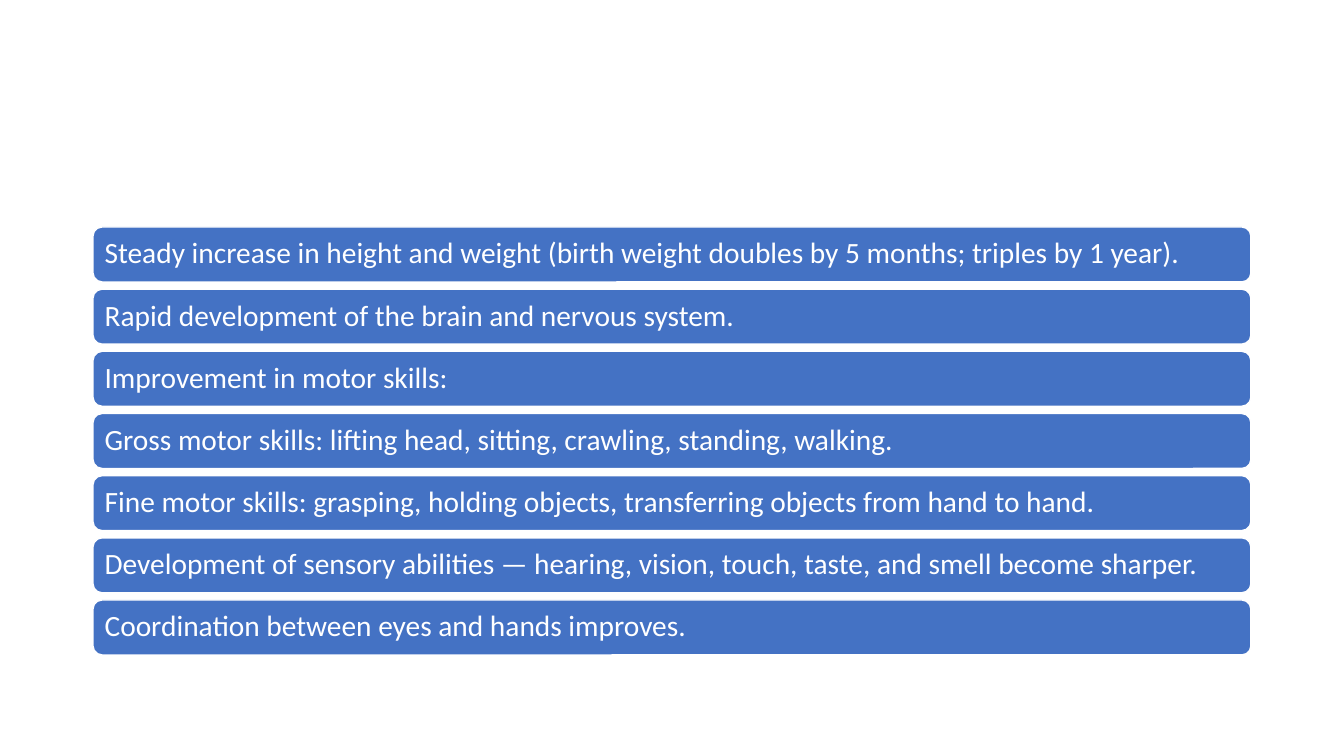
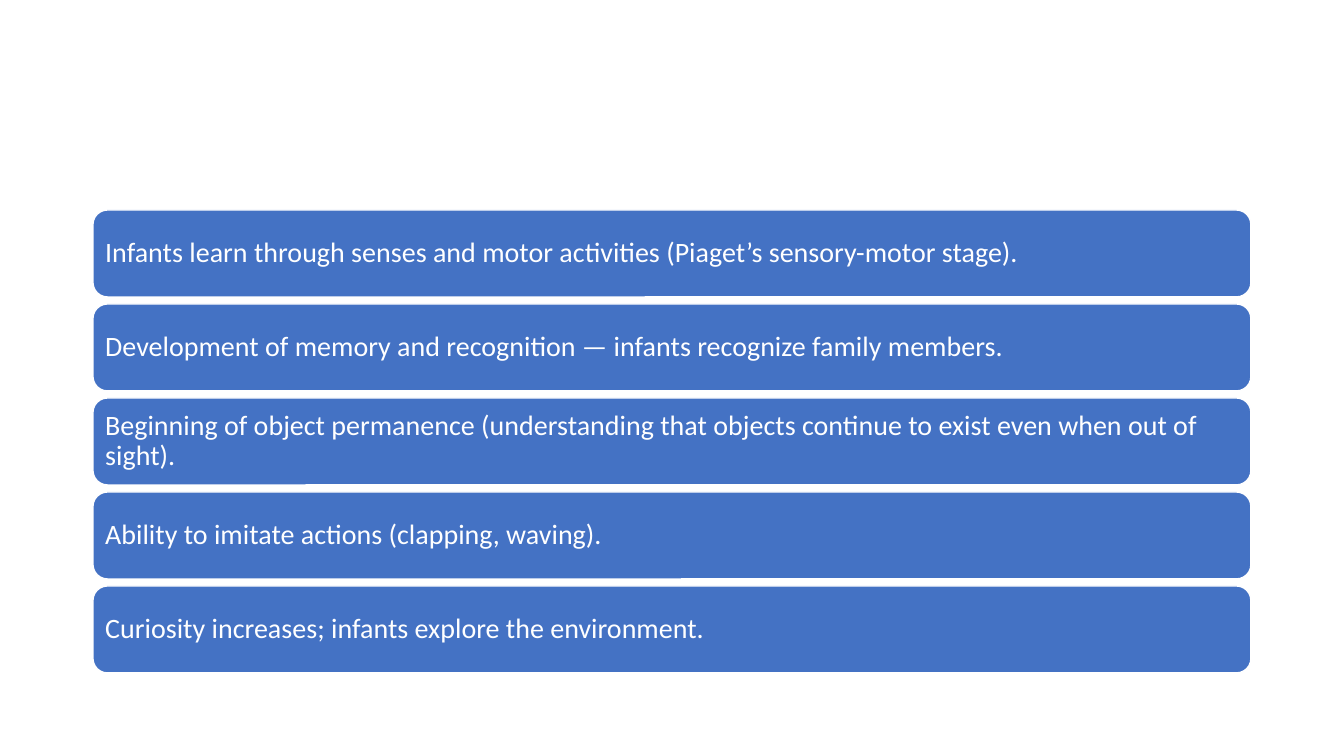
from dataclasses import dataclass

from pptx import Presentation
from pptx.dml.color import RGBColor as RGB
from pptx.enum.shapes import MSO_SHAPE as SHAPE
from pptx.enum.text import MSO_ANCHOR as ANCHOR, PP_ALIGN as ALIGN
from pptx.util import Emu, Pt

# Content: one stack of bars per slide, lengths in px
STACKS = [
    {
        "top": 227, "bottom": 655, "bar_h": 55, "inset": 9, "size": 21,
        "bars": [
            "Steady increase in height and weight (birth weight doubles by 5 months; triples by 1 year).",
            "Rapid development of the brain and nervous system.",
            "Improvement in motor skills:",
            "Gross motor skills: lifting head, sitting, crawling, standing, walking.",
            "Fine motor skills: grasping, holding objects, transferring objects from hand to hand.",
            "Development of sensory abilities — hearing, vision, touch, taste, and smell become sharper.",
            "Coordination between eyes and hands improves.",
        ],
    },
    {
        "top": 210, "bottom": 673, "bar_h": 87, "inset": 8, "size": 20,
        "bars": [
            "Infants learn through senses and motor activities (Piaget’s sensory-motor stage).",
            "Development of memory and recognition — infants recognize family members.",
            "Beginning of object permanence (understanding that objects continue to exist even when out of sight).",
            "Ability to imitate actions (clapping, waving).",
            "Curiosity increases; infants explore the environment.",
        ],
    },
]


# Shared look
@dataclass(frozen=True)
class Theme:
    font: str = "Calibri"
    bar: RGB = RGB(0x44, 0x72, 0xC4)
    white: RGB = RGB(0xFF, 0xFF, 0xFF)
    line_w: int = 1
    line_spacing: float = 0.9


THEME = Theme()
SLIDE_W, SLIDE_H = 1344, 756
BAR_X, BAR_W = 93, 1158
SCALE = 12192000 / SLIDE_W


def px(n):
    return Emu(round(n * SCALE))


def add_bar(slide, text, y, h, inset, size):
    sp = slide.shapes.add_shape(
        SHAPE.ROUNDED_RECTANGLE, px(BAR_X), px(y), px(BAR_W), px(h))
    sp.shadow.inherit = False
    sp.fill.solid()
    sp.fill.fore_color.rgb = THEME.bar
    sp.line.color.rgb = THEME.white
    sp.line.width = Pt(THEME.line_w)

    tf = sp.text_frame
    tf.word_wrap = True
    tf.vertical_anchor = ANCHOR.MIDDLE
    tf.margin_left = tf.margin_right = px(inset)
    tf.margin_top = tf.margin_bottom = px(inset)
    tf.text = text
    p = tf.paragraphs[0]
    p.alignment = ALIGN.LEFT
    p.line_spacing = THEME.line_spacing
    font = p.runs[0].font
    font.name = THEME.font
    font.size = Pt(size)
    font.color.rgb = THEME.white


def add_stack(slide, stack):
    """Spread the bars evenly from the top to the bottom of the stack."""
    bars, h = stack["bars"], stack["bar_h"]
    pitch = (stack["bottom"] - stack["top"] - h) / (len(bars) - 1)
    for i, text in enumerate(bars):
        add_bar(slide, text, stack["top"] + i * pitch, h,
                stack["inset"], stack["size"])


def main():
    prs = Presentation()
    prs.slide_width, prs.slide_height = px(SLIDE_W), px(SLIDE_H)
    blank = prs.slide_layouts[6]
    for stack in STACKS:
        add_stack(prs.slides.add_slide(blank), stack)
    prs.save("out.pptx")


if __name__ == "__main__":
    main()
